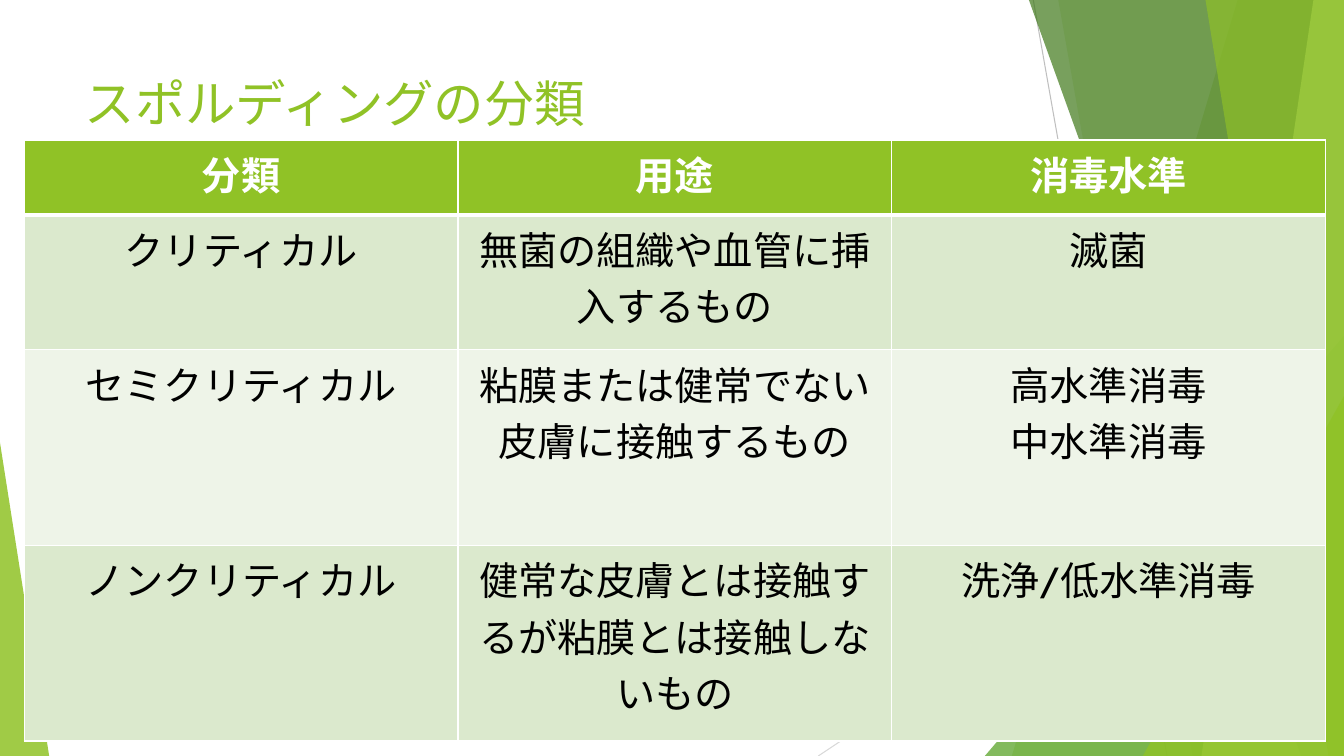
from lxml import etree
from pptx import Presentation
from pptx.dml.color import RGBColor
from pptx.enum.shapes import MSO_CONNECTOR, MSO_SHAPE
from pptx.enum.text import MSO_ANCHOR, PP_ALIGN
from pptx.oxml.ns import qn
from pptx.util import Cm, Pt

STRAIGHT = MSO_CONNECTOR.STRAIGHT
TRIANGLE = MSO_SHAPE.ISOSCELES_TRIANGLE
LEFT, CENTER = PP_ALIGN.LEFT, PP_ALIGN.CENTER
TOP = MSO_ANCHOR.TOP
WIDTH, HEIGHT = 33.87, 19.05
GREEN, WHITE, BLACK = "90C226", "FFFFFF", "000000"
BANDS = ("DBE9CD", "EEF4E8")


def color(value):
    return RGBColor.from_string(value)


class Deck:
    font = "Cabin"

    def __init__(self):
        self.prs = Presentation()
        self.prs.slide_width, self.prs.slide_height = Cm(WIDTH), Cm(HEIGHT)
        self.s = self.prs.slides.add_slide(self.prs.slide_layouts[5])

    def style(self, p, size, fill, align, bold=False):
        p.alignment = align
        p.font.name, p.font.size, p.font.bold = self.font, Pt(size), bold
        p.font.color.rgb = color(fill)

    def paint(self, sp, fill, opacity):
        sp.shadow.inherit = False
        sp.line.fill.background()
        sp.fill.solid()
        sp.fill.fore_color.rgb = color(fill)
        clr = sp._element.spPr.find(qn("a:solidFill")).find(qn("a:srgbClr"))
        etree.SubElement(clr, qn("a:alpha"), val=str(opacity * 1000))

    def line(self, x1, y1, x2, y2, stroke):
        sp = self.s.shapes.add_connector(STRAIGHT, Cm(x1), Cm(y1), Cm(x2), Cm(y2))
        sp.line.color.rgb, sp.line.width = color(stroke), Pt(0.75)
        etree.SubElement(sp._element.spPr, qn("a:effectLst"))

    def right_panel(self, top_x, bottom_x, fill, opacity):
        fb = self.s.shapes.build_freeform(Cm(top_x), Cm(0))
        fb.add_line_segments([(Cm(x), Cm(y)) for x, y in (
            (WIDTH, 0), (WIDTH, HEIGHT), (bottom_x, HEIGHT))])
        self.paint(fb.convert_to_shape(), fill, opacity)

    def corner(self, x, width, height, apex, fill, opacity):
        sp = self.s.shapes.add_shape(
            TRIANGLE, Cm(x), Cm(HEIGHT - height), Cm(width), Cm(height))
        sp.adjustments[0] = apex
        self.paint(sp, fill, opacity)

    def title(self, text, x, y, width, height):
        sp = self.s.shapes.title
        sp.left, sp.top, sp.width, sp.height = Cm(x), Cm(y), Cm(width), Cm(height)
        tf = sp.text_frame
        tf.text, tf.vertical_anchor, tf.word_wrap = text, TOP, True
        self.style(tf.paragraphs[0], 36, GREEN, LEFT)
        self.s.shapes._spTree.append(sp._element)

    def borders(self, cell, widths):
        tcPr = cell._tc.get_or_add_tcPr()
        for side, width in widths.items():
            ln = etree.SubElement(tcPr, qn(f"a:ln{side}"), w=str(Pt(width)))
            fill = etree.SubElement(ln, qn("a:solidFill"))
            etree.SubElement(fill, qn("a:srgbClr"), val=WHITE)

    def table(self, rows, x, y, col_width, heights):
        cols = len(rows[0])
        table = self.s.shapes.add_table(
            len(rows), cols, Cm(x), Cm(y),
            Cm(col_width * cols), Cm(sum(heights))).table
        for column in table.columns:
            column.width = Cm(col_width)
        for i, (texts, height) in enumerate(zip(rows, heights)):
            table.rows[i].height = Cm(height)
            header = i == 0
            for j, text in enumerate(texts):
                cell = table.cell(i, j)
                cell.text = text
                for p in cell.text_frame.paragraphs:
                    self.style(p, 28, WHITE if header else BLACK, CENTER, header)
                self.borders(cell, {"L": 1, "R": 1, "T": 3 if i == 1 else 1,
                                    "B": 3 if header else 1})
                cell.fill.solid()
                cell.fill.fore_color.rgb = color(
                    GREEN if header else BANDS[(i - 1) % 2])


def main():
    deck = Deck()
    deck.line(26.04, 0, 29.41, HEIGHT, "BFBFBF")
    deck.line(WIDTH, 10.24, 20.62, HEIGHT, "D9D9D9")
    deck.right_panel(31.19, 25.5, GREEN, 30)
    deck.right_panel(26.67, 30.05, GREEN, 20)
    deck.corner(24.82, 9.05, 10.59, 1, "54A021", 72)
    deck.right_panel(25.93, 32.79, "3F7819", 70)
    deck.right_panel(33.1, 30.28, "C0E474", 70)
    deck.right_panel(30.38, 33.48, GREEN, 65)
    deck.corner(28.8, 5.07, 9.07, 1, GREEN, 80)
    deck.corner(0, 1.24, 7.9, 0, GREEN, 85)
    deck.title("スポルディングの分類", 1.88, 1.7, 23.88, 3.66)
    deck.table([
        ("分類", "用途", "消毒水準"),
        ("クリティカル", "無菌の組織や血管に挿入するもの", "滅菌"),
        ("セミクリティカル", "粘膜または健常でない皮膚に接触するもの",
         "高水準消毒\n中水準消毒"),
        ("ノンクリティカル", "健常な皮膚とは接触するが粘膜とは接触しないもの",
         "洗浄/低水準消毒"),
    ], 0.61, 3.53, 10.93, (1.88, 3.4, 4.93, 4.93))
    deck.prs.save("out.pptx")


if __name__ == "__main__":
    main()
